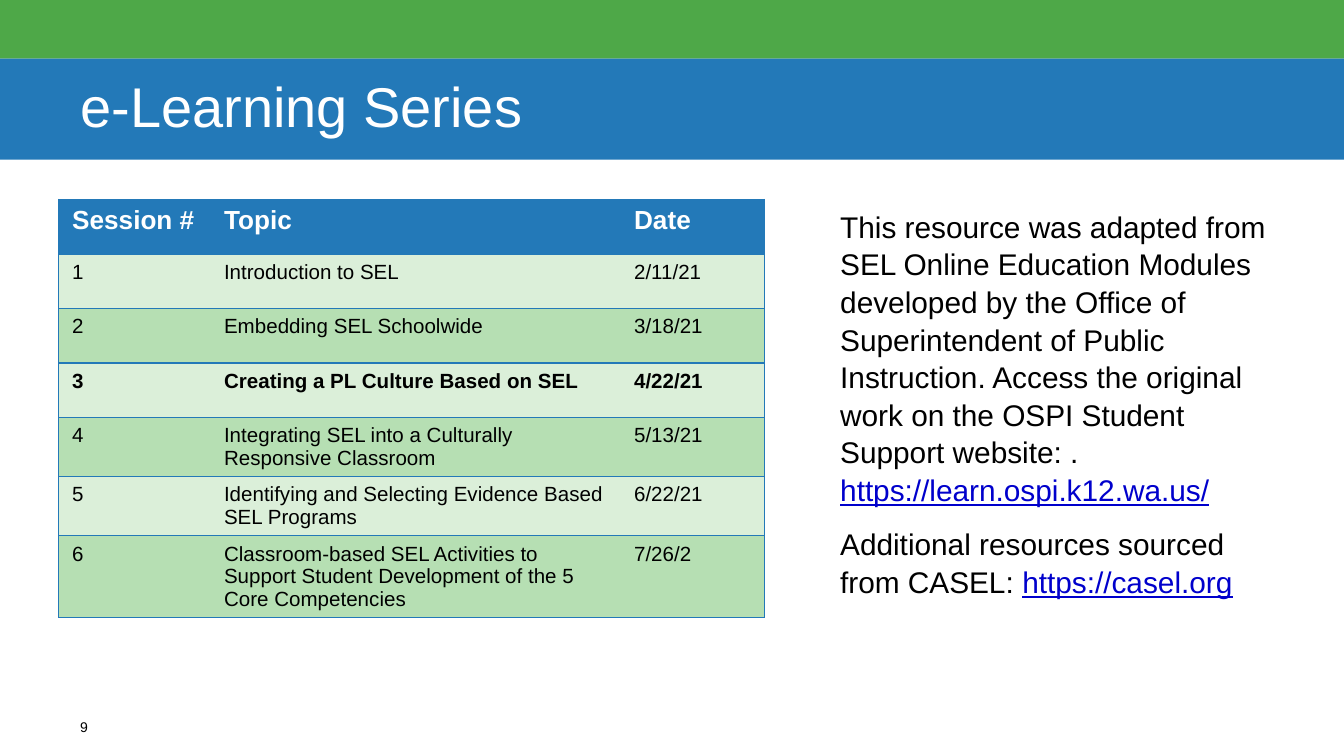
from dataclasses import dataclass

from lxml.etree import SubElement
from pptx import Presentation
from pptx.dml.color import RGBColor
from pptx.enum.shapes import MSO_SHAPE
from pptx.enum.text import MSO_ANCHOR, PP_ALIGN
from pptx.oxml.ns import qn
from pptx.util import Cm, Pt

BLUE, GREEN, WHITE, BLACK = "2379B8", "4EA848", "FFFFFF", "000000"
LINK = "0000CC"
BANDS = ["DBEFD9", "B6DFB3"]


@dataclass
class Area:
    left: float
    top: float
    width: float
    height: float

    def lengths(self) -> list:
        return [Cm(value) for value in (self.left, self.top, self.width, self.height)]


@dataclass
class Session:
    number: str
    topic: str
    date: str
    current: bool = False


@dataclass
class Note:
    text: str
    link: str
    space_before: float = 0


SESSIONS = [
    Session("1", "Introduction to SEL", "2/11/21"),
    Session("2", "Embedding SEL Schoolwide", "3/18/21"),
    Session("3", "Creating a PL Culture Based on SEL", "4/22/21", True),
    Session("4", "Integrating SEL into a Culturally Responsive Classroom", "5/13/21"),
    Session("5", "Identifying and Selecting Evidence Based SEL Programs", "6/22/21"),
    Session("6", "Classroom-based SEL Activities to Support Student Development "
                 "of the 5 Core Competencies", "7/26/2"),
]
NOTES = [
    Note("This resource was adapted from SEL Online Education Modules developed by "
         "the Office of Superintendent of Public Instruction. Access the original work "
         "on the OSPI Student Support website: . ", "https://learn.ospi.k12.wa.us/"),
    Note("Additional resources sourced from CASEL: ", "https://casel.org", 9),
]


def color(value: str) -> RGBColor:
    return RGBColor.from_string(value)


def style(font, size: float, fill: str, bold: bool = False) -> None:
    font.name = "Arial"
    font.size = Pt(size)
    font.bold = bold
    font.color.rgb = color(fill)


def set_margins(frame, across: float, down: float) -> None:
    frame.word_wrap = True
    frame.margin_left = frame.margin_right = Cm(across)
    frame.margin_top = frame.margin_bottom = Cm(down)


def add_bar(page, area: Area, fill: str):
    bar = page.shapes.add_shape(MSO_SHAPE.RECTANGLE, *area.lengths())
    bar.shadow.inherit = False
    bar.fill.solid()
    bar.fill.fore_color.rgb = color(fill)
    bar.line.fill.background()
    return bar


def add_title(page, area: Area, text: str) -> None:
    frame = add_bar(page, area, BLUE).text_frame
    set_margins(frame, 1.52, 0)
    frame.vertical_anchor = MSO_ANCHOR.MIDDLE
    para = frame.paragraphs[0]
    para.text = text
    para.alignment = PP_ALIGN.LEFT
    para.line_spacing = 0.9
    style(para.font, 30, WHITE)


def set_borders(cell, first: bool, last: bool) -> None:
    properties = cell._tc.get_or_add_tcPr()
    for side, visible in (("L", first), ("R", last), ("T", True), ("B", True)):
        line = SubElement(properties, qn(f"a:ln{side}"), w=str(Pt(0.75)))
        if visible:
            fill = SubElement(line, qn("a:solidFill"))
            SubElement(fill, qn("a:srgbClr"), val=BLUE)
        else:
            SubElement(line, qn("a:noFill"))


def fill_row(table, row: int, texts: list, fill: str, size: float,
             ink: str, bold: bool) -> None:
    for column, text in enumerate(texts):
        cell = table.cell(row, column)
        set_borders(cell, column == 0, column == len(texts) - 1)
        cell.fill.solid()
        cell.fill.fore_color.rgb = color(fill)
        para = cell.text_frame.paragraphs[0]
        para.text = text
        style(para.font, size, ink, bold)


def add_schedule(page, area: Area, widths: list) -> None:
    rows = len(SESSIONS) + 1
    table = page.shapes.add_table(rows, len(widths), *area.lengths()).table
    for column, width in zip(table.columns, widths):
        column.width = Cm(width)
    fill_row(table, 0, ["Session #", "Topic", "Date"], BLUE, 14, WHITE, True)
    for row, session in enumerate(SESSIONS, 1):
        texts = [session.number, session.topic, session.date]
        fill_row(table, row, texts, BANDS[(row - 1) % 2], 11, BLACK, session.current)


def add_notes(page, area: Area) -> None:
    frame = page.shapes.add_textbox(*area.lengths()).text_frame
    set_margins(frame, 0.13, 0.13)
    for index, note in enumerate(NOTES):
        para = frame.add_paragraph() if index else frame.paragraphs[0]
        para.line_spacing = 1.05
        para.space_before = Pt(note.space_before)
        for text, ink in ((note.text, BLACK), (note.link, LINK)):
            span = para.add_run()
            span.text = text
            style(span.font, 16, ink)
            span.font.underline = ink == LINK


def add_page_number(page, area: Area, text: str) -> None:
    frame = page.shapes.add_textbox(*area.lengths()).text_frame
    set_margins(frame, 0.25, 0.25)
    frame.vertical_anchor = MSO_ANCHOR.MIDDLE
    para = frame.paragraphs[0]
    para.text = text
    para.alignment = PP_ALIGN.RIGHT
    style(para.font, 7.5, BLACK)


def main() -> None:
    deck = Presentation()
    deck.slide_width, deck.slide_height = Cm(25.4), Cm(14.29)
    page = deck.slides.add_slide(deck.slide_layouts[6])
    add_bar(page, Area(0, 0, 25.4, 1.11), GREEN)
    add_title(page, Area(0, 1.11, 25.4, 1.91), "e-Learning Series")
    add_schedule(page, Area(1.11, 3.77, 13.34, 7.21), [2.87, 7.75, 2.72])
    add_notes(page, Area(15.75, 3.78, 8.56, 7.67))
    add_page_number(page, Area(1.11, 13.5, 0.8, 0.48), "9")
    deck.save("out.pptx")


if __name__ == "__main__":
    main()
